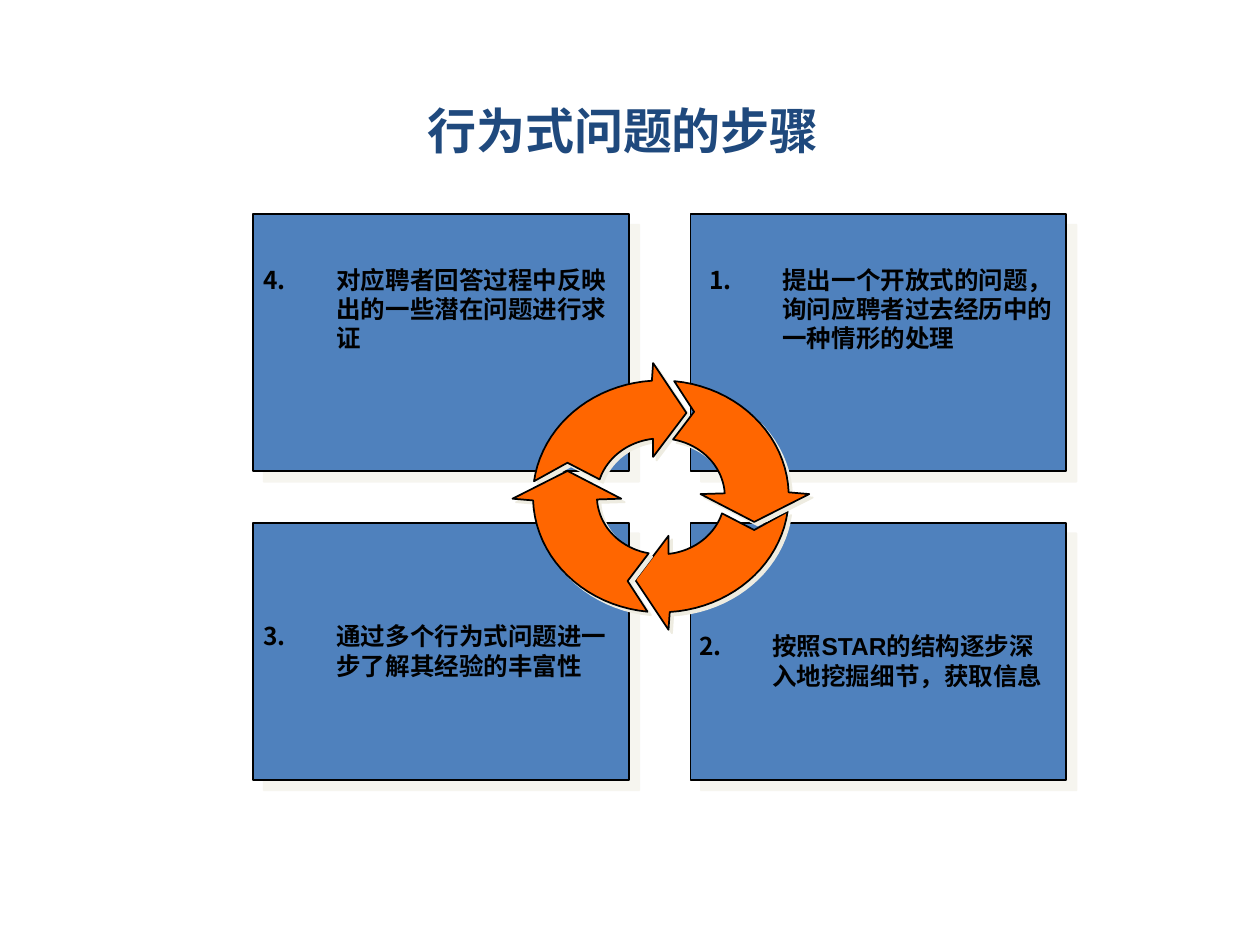
from math import cos, radians, sin

from lxml.etree import SubElement
from pptx import Presentation
from pptx.dml.color import RGBColor
from pptx.enum.shapes import MSO_SHAPE
from pptx.enum.text import MSO_ANCHOR, MSO_AUTO_SIZE, PP_ALIGN
from pptx.oxml.ns import qn
from pptx.util import Inches, Pt

# The slide is a grid of 100 columns by 75 rows
COLUMNS, ROWS = 100, 75
CELL = Inches(0.1)

BLUE, ORANGE, NAVY, BLACK, SHADE = "4F81BD", "FF6600", "1F497D", "000000", "EEECE1"

# Number, text, card column and row, text offset inside the card
STEPS = [
    (1, "提出一个开放式的问题，询问应聘者过去经历中的一种情形的处理", 1, 0, (1.5, 4)),
    (2, "按照STAR的结构逐步深入地挖掘细节，获取信息", 1, 1, (0.7, 8.6)),
    (3, "通过多个行为式问题进一步了解其经验的丰富性", 0, 1, (0.8, 7.8)),
    (4, "对应聘者回答过程中反映出的一些潜在问题进行求证", 0, 0, (0.8, 4)),
]

# Arc angles in degrees, arrowhead and tail notch in radii from the ring's centre
TOP_ARROW = {
    "inner": (197, 263), "outer": (266, 187.5),
    "head": [(-0.06, -0.34), (0.2, -0.72), (-0.06, -1.15)], "notch": (-0.73, -0.29),
}
RIGHT_ARROW = {
    "inner": (281, 357), "outer": (358, 276),
    "head": [(0.31, -0.02), (0.73, 0.22), (1.16, -0.02)], "notch": (0.26, -0.73),
}
ARC_STEPS = 20


def color(value):
    return RGBColor.from_string(value)


def grid(*cells):
    return [round(cell * CELL) for cell in cells]


def decorate(shape, fill, opacity, distance):
    """Solid fill, thin black outline and a hard diagonal shadow."""
    shape.fill.solid()
    shape.fill.fore_color.rgb = color(fill)
    shape.line.color.rgb = color(BLACK)
    shape.line.width = Pt(1)
    shape.shadow.inherit = False
    effects = shape.element.spPr.find(qn("a:effectLst"))
    shadow = SubElement(effects, qn("a:outerShdw"), blurRad="0", dist=str(Pt(distance)),
                        dir=str(45 * 60000), algn="ctr", rotWithShape="0")
    tint = SubElement(shadow, qn("a:srgbClr"), val=SHADE)
    SubElement(tint, qn("a:alpha"), val=str(opacity * 1000))


def add_text(slide, box, text, size, ink, frame_format):
    frame = slide.shapes.add_textbox(*grid(*box)).text_frame
    for name, value in {"word_wrap": True, **frame_format}.items():
        setattr(frame, name, value)
    paragraph = frame.paragraphs[0]
    run = paragraph.add_run()
    run.text = text
    for name, value in {"name": "Arial", "size": Pt(size), "bold": True}.items():
        setattr(run.font, name, value)
    run.font.color.rgb = color(ink)
    return paragraph


def number_paragraph(paragraph, number):
    """Hanging automatic number with space before of 20 %."""
    properties = paragraph._p.get_or_add_pPr()
    indent = Inches(0.58)
    properties.set("marL", str(indent))
    properties.set("indent", str(-indent))
    before = SubElement(properties, qn("a:spcBef"))
    SubElement(before, qn("a:spcPct"), val="20000")
    bullet_color = SubElement(properties, qn("a:buClr"))
    SubElement(bullet_color, qn("a:srgbClr"), val=BLACK)
    SubElement(properties, qn("a:buAutoNum"), type="arabicPeriod", startAt=str(number))


def add_title(slide, box):
    paragraph = add_text(slide, box, "行为式问题的步骤", 28, NAVY,
                         {"vertical_anchor": MSO_ANCHOR.MIDDLE})
    paragraph.alignment = PP_ALIGN.CENTER


def add_cards(slide, box):
    """Two by two cards, each with its numbered step."""
    left, top, width, height = box
    card_width, card_height = 29.8, 20.4
    label_format = dict.fromkeys(
        ("margin_left", "margin_top", "margin_right", "margin_bottom"), 0)
    label_format["auto_size"] = MSO_AUTO_SIZE.SHAPE_TO_FIT_TEXT
    for number, text, column, row, (inset_x, inset_y) in STEPS:
        x = left + column * (width - card_width)
        y = top + row * (height - card_height)
        card = slide.shapes.add_shape(
            MSO_SHAPE.RECTANGLE, *grid(x, y, card_width, card_height))
        decorate(card, BLUE, opacity=50, distance=8.5)
        label_box = (x + inset_x, y + inset_y, 28.5, 7 if row == 0 else 4.7)
        label = add_text(slide, label_box, text, 14, BLACK, label_format)
        number_paragraph(label, number)


def arc(radius, start, end):
    angles = [radians(start + (end - start) * i / ARC_STEPS) for i in range(ARC_STEPS + 1)]
    return [(radius * cos(angle), radius * sin(angle)) for angle in angles]


def add_ring(slide, box):
    """Four arrows; the bottom and left ones are half turns of the top and right."""
    left, top, width, height = box
    radius_x, radius_y = width / 2, height / 2
    for arrow, turn in ((TOP_ARROW, 1), (TOP_ARROW, -1), (RIGHT_ARROW, -1), (RIGHT_ARROW, 1)):
        outline = [*arc(0.5, *arrow["inner"]), *arrow["head"],
                   *arc(1, *arrow["outer"]), arrow["notch"]]
        points = [grid(left + radius_x * (1 + turn * x), top + radius_y * (1 + turn * y))
                  for x, y in outline]
        builder = slide.shapes.build_freeform(*points[0])
        builder.add_line_segments(points[1:], close=True)
        decorate(builder.convert_to_shape(), ORANGE, opacity=100, distance=2.8)


def main():
    deck = Presentation()
    deck.slide_width, deck.slide_height = grid(COLUMNS, ROWS)
    slide = deck.slides.add_slide(deck.slide_layouts[6])
    add_cards(slide, (20.1, 17, 64.5, 44.9))
    add_ring(slide, (42.3, 30.2, 20.3, 18.4))
    add_title(slide, (15, 6.7, 68.9, 7.2))
    deck.save("out.pptx")


if __name__ == "__main__":
    main()
